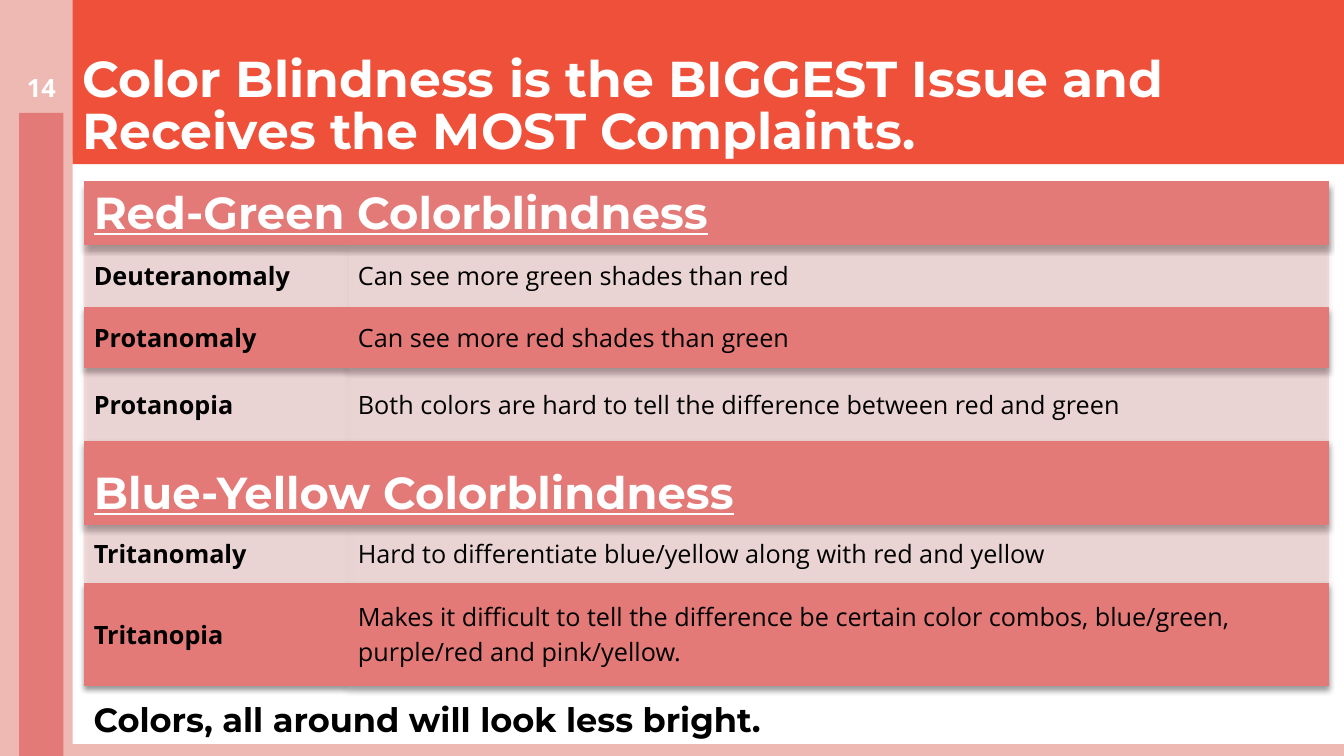
from lxml import etree
from pptx import Presentation
from pptx.dml.color import RGBColor
from pptx.enum.shapes import MSO_SHAPE
from pptx.enum.text import MSO_ANCHOR, PP_ALIGN
from pptx.oxml import parse_xml
from pptx.oxml.ns import qn
from pptx.util import Inches, Pt

RECTANGLE = MSO_SHAPE.RECTANGLE
MIDDLE, BOTTOM = MSO_ANCHOR.MIDDLE, MSO_ANCHOR.BOTTOM
LEFT, CENTER = PP_ALIGN.LEFT, PP_ALIGN.CENTER

HEADING_FONT, BODY_FONT = "Montserrat", "Open Sans"
COLORS = {
    "background": "EEB9B3",
    "panel": "FFFFFF",
    "title": "EF5039",
    "accent": "E47A77",
    "white": "FFFFFF",
    "black": "000000",
}
NO_STYLE = "{2D5ABB26-0587-4C30-8999-92F81FD0307C}"
LIGHT_ROW_ALPHA = "20000"
TABLE_SHADOW = (
    '<a:effectLst xmlns:a="http://schemas.openxmlformats.org/drawingml/2006/main">'
    '<a:outerShdw blurRad="50800" dist="38100" dir="5400000" algn="t" rotWithShape="0">'
    '<a:srgbClr val="000000"><a:alpha val="40000"/></a:srgbClr>'
    "</a:outerShdw></a:effectLst>"
)

# Row height, texts, anchor, light fill; a single text is a heading over both columns
ROWS = [
    (0.62, ["Red-Green Colorblindness"], MIDDLE, False),
    (0.61, ["Deuteranomaly", "Can see more green shades than red"], MIDDLE, True),
    (0.61, ["Protanomaly", "Can see more red shades than green"], MIDDLE, False),
    (0.72, ["Protanopia",
            "Both colors are hard to tell the difference between red and green"], MIDDLE, True),
    (0.84, ["Blue-Yellow Colorblindness"], BOTTOM, False),
    (0.57, ["Tritanomaly",
            "Hard to differentiate blue/yellow along with red and yellow"], MIDDLE, True),
    (1.02, ["Tritanopia",
            "Makes it difficult to tell the difference be certain color combos, "
            "blue/green, purple/red and pink/yellow."], MIDDLE, False),
]
COLUMN_WIDTHS = [2.62, 9.73]


def add_rectangle(left, top, width, height, color):
    shape = slide.shapes.add_shape(
        RECTANGLE, Inches(left), Inches(top), Inches(width), Inches(height))
    shape.shadow.inherit = False
    shape.fill.solid()
    shape.fill.fore_color.rgb = RGBColor.from_string(COLORS[color])
    shape.line.fill.background()
    return shape


def write_text(frame, text, font_name, size, color, bold=True, underline=False, align=LEFT):
    """Put one formatted run in the first paragraph and return that paragraph."""
    frame.word_wrap = True
    paragraph = frame.paragraphs[0]
    paragraph.alignment = align
    run = paragraph.add_run()
    run.text = text
    run.font.name = font_name
    run.font.size = Pt(size)
    run.font.bold = bold
    run.font.underline = underline
    run.font.color.rgb = RGBColor.from_string(COLORS[color])
    return paragraph


presentation = Presentation()
presentation.slide_width = Inches(13.33)
presentation.slide_height = Inches(7.5)
slide = presentation.slides.add_slide(presentation.slide_layouts[6])
slide.background.fill.solid()
slide.background.fill.fore_color.rgb = RGBColor.from_string(COLORS["background"])

add_rectangle(0.72, 1.55, 12.61, 5.83, "panel")

# Closing statement
closing = slide.shapes.add_textbox(Inches(0.83), Inches(6.85), Inches(12.35), Inches(0.53))
closing.text_frame.vertical_anchor = BOTTOM
paragraph = write_text(closing.text_frame, "Colors, all around will look less bright.",
                       HEADING_FONT, 24, "black")
paragraph.space_before = Pt(12)
paragraph.space_after = Pt(2)

# Table of color blindness types
table = slide.shapes.add_table(
    len(ROWS), len(COLUMN_WIDTHS), Inches(0.83), Inches(1.8), Inches(12.35), Inches(5)).table
table.first_row = False
table.horz_banding = False
table_properties = table._tbl.tblPr
table_properties.find(qn("a:tableStyleId")).text = NO_STYLE
table_properties.insert(0, parse_xml(TABLE_SHADOW))

for column, width in zip(table.columns, COLUMN_WIDTHS):
    column.width = Inches(width)

for row_index, (height, texts, anchor, is_light) in enumerate(ROWS):
    table.rows[row_index].height = Inches(height)
    is_heading = len(texts) == 1
    if is_heading:
        table.cell(row_index, 0).merge(table.cell(row_index, 1))
    for column_index, text in enumerate(texts):
        cell = table.cell(row_index, column_index)
        cell.vertical_anchor = anchor
        cell.fill.solid()
        cell.fill.fore_color.rgb = RGBColor.from_string(COLORS["accent"])
        if is_light:
            fill_color = cell._tc.tcPr.find(qn("a:solidFill")).find(qn("a:srgbClr"))
            etree.SubElement(fill_color, qn("a:alpha")).set("val", LIGHT_ROW_ALPHA)
        if is_heading:
            write_text(cell.text_frame, text, HEADING_FONT, 32, "white", underline=True)
        else:
            write_text(cell.text_frame, text, BODY_FONT, 18, "black", bold=column_index == 0)

# Title band
title = add_rectangle(0.72, 0, 12.61, 1.63, "title")
title.text_frame.vertical_anchor = BOTTOM
paragraph = write_text(
    title.text_frame,
    "Color Blindness is the BIGGEST Issue and Receives the MOST Complaints.",
    HEADING_FONT, 36, "white")
paragraph.line_spacing = 0.85

# Side bar with slide number
add_rectangle(0.19, 1.12, 0.44, 6.38, "accent")
number = slide.shapes.add_textbox(Inches(0.19), Inches(0.72), Inches(0.44), Inches(0.33))
frame = number.text_frame
frame.margin_left = frame.margin_right = frame.margin_top = frame.margin_bottom = 0
write_text(frame, "14", BODY_FONT, 18, "white", align=CENTER)

presentation.save("out.pptx")
